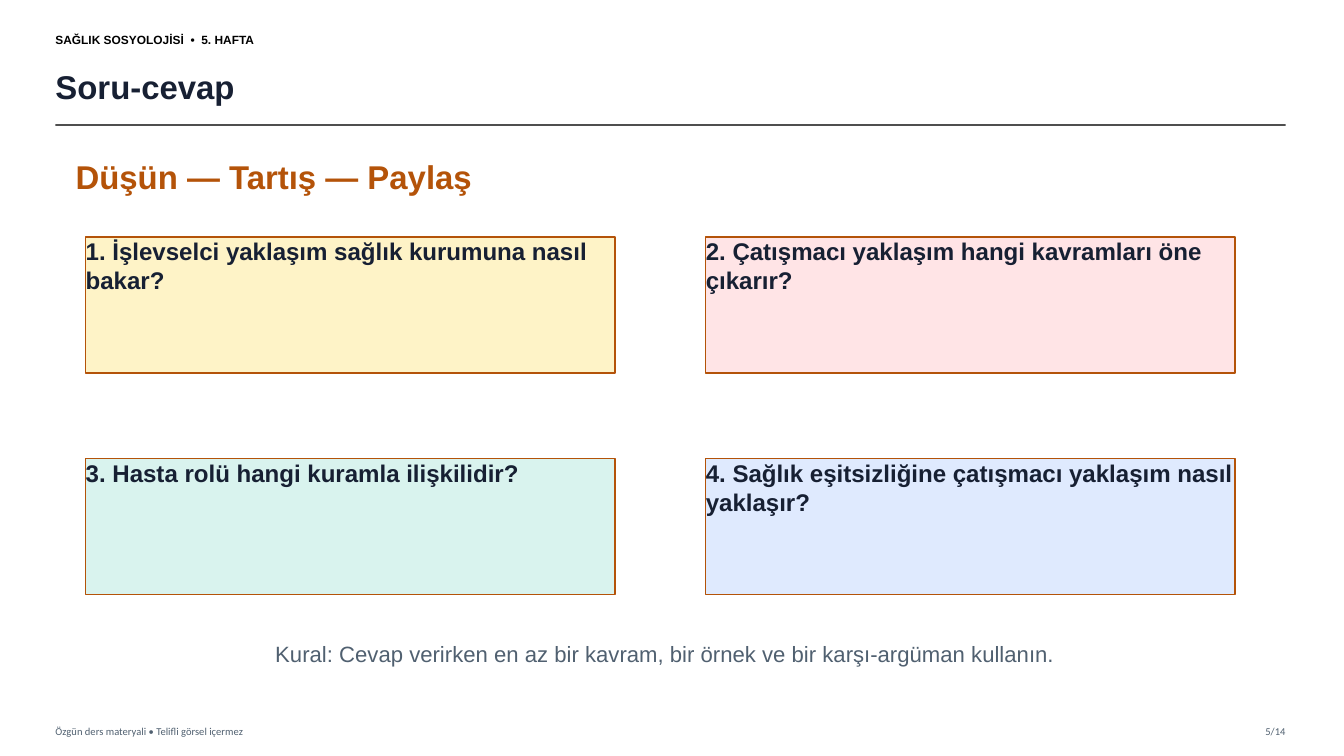
import pptx
import pptx.dml.color
import pptx.enum.shapes
import pptx.enum.text
import pptx.oxml
import pptx.oxml.ns
import pptx.util
from pptx.util import Inches

ALIGN = pptx.enum.text.PP_ALIGN
ANCHOR = pptx.enum.text.MSO_ANCHOR
COLORS = {
    "ink": "172033", "black": "000000", "rule": "333333", "muted": "506070",
    "accent": "B45309", "yellow": "FEF3C7", "pink": "FFE4E6",
    "mint": "D9F3EE", "blue": "DFEAFE",
}


def rgb(name):
    return pptx.dml.color.RGBColor.from_string(COLORS[name])


def write(sp, text, size, color, bold=False, font="Arial",
          align=ALIGN.LEFT, anchor=ANCHOR.TOP):
    """Fill a shape with one formatted run and no inner margins."""
    tf = sp.text_frame
    tf.word_wrap = True
    tf.auto_size = pptx.enum.text.MSO_AUTO_SIZE.NONE
    tf.margin_left = tf.margin_right = tf.margin_top = tf.margin_bottom = 0
    tf.vertical_anchor = anchor
    p = tf.paragraphs[0]
    p.alignment = align
    r = p.add_run()
    r.text = text
    r.font.name = font
    r.font.size = pptx.util.Pt(size)
    r.font.bold = bold
    r.font.color.rgb = rgb(color)


prs = pptx.Presentation()
prs.slide_width = Inches(13.33)
prs.slide_height = Inches(7.5)
s = prs.slides.add_slide(prs.slide_layouts[5])
s.background.fill.solid()
s.background.fill.fore_color.rgb = pptx.dml.color.RGBColor.from_string("FFFFFF")

# Title and the rule below it
title = s.shapes.title
title.left, title.top = Inches(0.55), Inches(0.58)
title.width, title.height = Inches(11.95), Inches(0.55)
write(title, "Soru-cevap", 23.5, "ink", bold=True, anchor=ANCHOR.MIDDLE)
title.text_frame.paragraphs[0].line_spacing = 1.0

rule = s.shapes.add_connector(pptx.enum.shapes.MSO_CONNECTOR.STRAIGHT,
                              Inches(0.55), Inches(1.24), Inches(12.75), Inches(1.24))
rule.line.color.rgb = rgb("rule")
rule.line.width = pptx.util.Pt(1.2)
srgb = rule._element.spPr.find(".//" + pptx.oxml.ns.qn("a:srgbClr"))
alpha = pptx.oxml.parse_xml('<a:alpha %s val="85000"/>' % pptx.oxml.ns.nsdecls("a"))
srgb.append(alpha)
rule._element.spPr.append(
    pptx.oxml.parse_xml("<a:effectLst %s/>" % pptx.oxml.ns.nsdecls("a")))

# Header, footer, subtitle and closing rule
small = dict(size=7.5, color="muted", font="Calibri", anchor=ANCHOR.MIDDLE)
labels = [
    ((0.55, 0.25, 3.6, 0.28), "SAĞLIK SOSYOLOJİSİ  •  5. HAFTA",
     dict(size=8.5, color="black", bold=True, anchor=ANCHOR.MIDDLE)),
    ((0.55, 7.14, 6, 0.22), "Özgün ders materyali • Telifli görsel içermez", small),
    ((12.1, 7.14, 0.65, 0.22), "5/14", dict(small, align=ALIGN.RIGHT)),
    ((0.75, 1.55, 5.7, 0.5), "Düşün — Tartış — Paylaş",
     dict(size=23.5, color="accent", bold=True)),
    ((1, 6.35, 11.2, 0.35),
     "Kural: Cevap verirken en az bir kavram, bir örnek ve bir karşı-argüman kullanın.",
     dict(size=15.8, color="muted", align=ALIGN.CENTER)),
]
for box, text, style in labels:
    write(s.shapes.add_textbox(*map(Inches, box)), text, **style)

# Question cards in a two by two grid
questions = [
    ("İşlevselci yaklaşım sağlık kurumuna nasıl bakar?", "yellow"),
    ("Çatışmacı yaklaşım hangi kavramları öne çıkarır?", "pink"),
    ("Hasta rolü hangi kuramla ilişkilidir?", "mint"),
    ("Sağlık eşitsizliğine çatışmacı yaklaşım nasıl yaklaşır?", "blue"),
]
for i, (question, fill) in enumerate(questions):
    row, col = divmod(i, 2)
    card = s.shapes.add_shape(pptx.enum.shapes.MSO_SHAPE.RECTANGLE,
                              Inches(0.85 + 6.15 * col), Inches(2.35 + 2.2 * row),
                              Inches(5.25), Inches(1.35))
    card.shadow.inherit = False
    card.fill.solid()
    card.fill.fore_color.rgb = rgb(fill)
    card.line.color.rgb = rgb("accent")
    card.line.width = pptx.util.Pt(1)
    write(card, f"{i + 1}. {question}", 17.2, "ink", bold=True)

prs.save("out.pptx")
